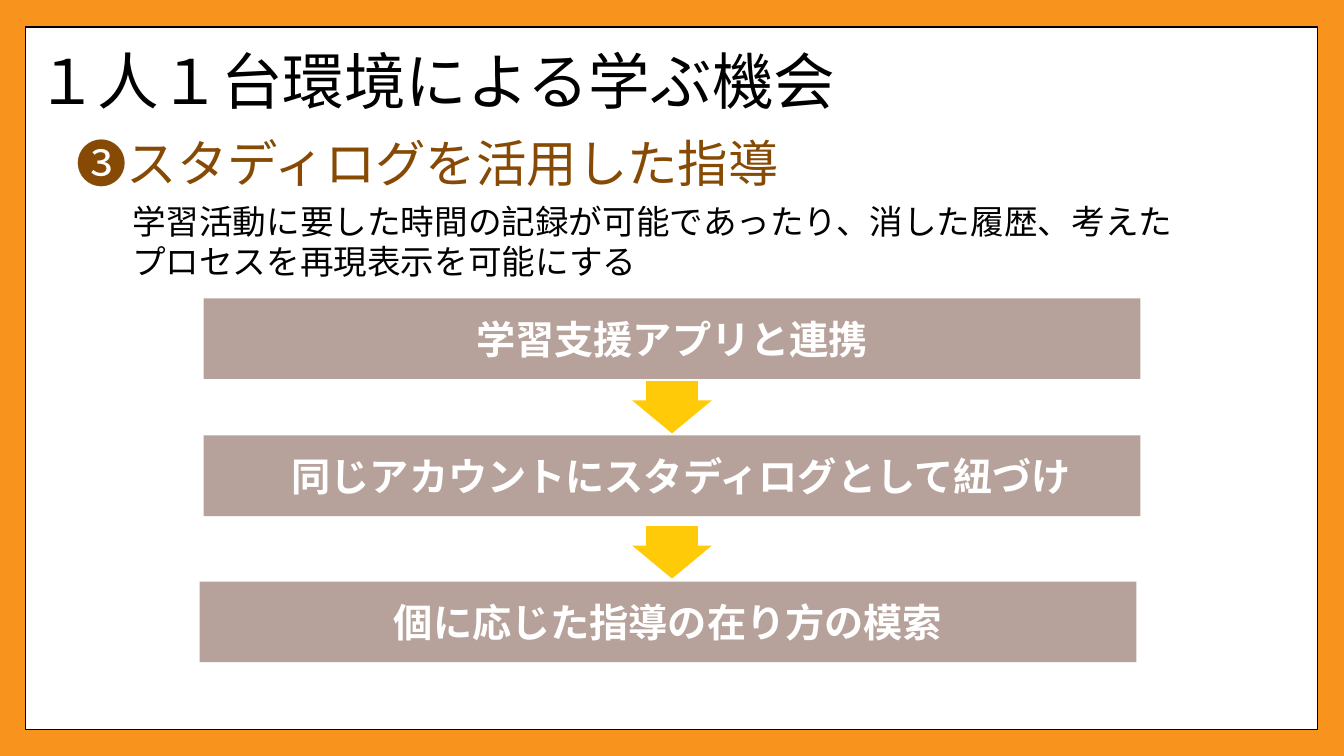
from lxml.etree import SubElement
from pptx import Presentation
from pptx.dml.color import RGBColor
from pptx.enum.shapes import MSO_SHAPE
from pptx.enum.text import MSO_ANCHOR, PP_ALIGN
from pptx.oxml.ns import qn
from pptx.util import Inches, Pt

FONT = "Noto Sans CJK JP"
TITLE = "１人１台環境による学ぶ機会"
TEXTS = [
    ("❸スタディログを活用した指導", (0.76, 1.31, 10.47, 0.55), 36, "864A04"),
    ("学習活動に要した時間の記録が可能であったり、消した履歴、考えたプロセスを再現表示を可能にする",
     (1.31, 1.99, 10.47, 0.8), 24, "000000"),
]
STEPS = [
    ("学習支援アプリと連携", 2.02, 2.96, 0.1),
    ("同じアカウントにスタディログとして紐づけ", 2.02, 4.32, 0.28),
    ("個に応じた指導の在り方の模索", 1.98, 5.77, 0.1),
]
STEP_SIZE = (9.29, 0.8)
ARROW_TOPS = [3.78, 5.22]
ARROW_SIZE = (0.79, 0.52)


def color(value):
    return RGBColor.from_string(value)


def write(text_frame, text, size, text_color, bold=False):
    text_frame.text = text
    text_frame.word_wrap = True
    for run in text_frame.paragraphs[0].runs:
        run.font.name = FONT
        run.font.size = Pt(size)
        run.font.bold = bold
        run.font.color.rgb = color(text_color)
        SubElement(run.font._element, qn("a:ea"), typeface=FONT)


def add_filled(slide, kind, box, fill):
    shape = slide.shapes.add_shape(kind, *map(Inches, box))
    shape.shadow.inherit = False
    shape.fill.solid()
    shape.fill.fore_color.rgb = color(fill)
    shape.line.fill.background()
    return shape


def main():
    presentation = Presentation()
    presentation.slide_width = Inches(13.33)
    presentation.slide_height = Inches(7.5)
    slide = presentation.slides.add_slide(presentation.slide_layouts[5])
    slide.background.fill.solid()
    slide.background.fill.fore_color.rgb = color("F8931D")

    panel = add_filled(slide, MSO_SHAPE.RECTANGLE, (0.25, 0.27, 12.82, 6.97), "FFFFFF")
    panel.line.color.rgb = color("000000")
    panel.line.width = Pt(1)

    title = slide.shapes.title
    title.element.addprevious(panel.element)
    title.left, title.top, title.width, title.height = map(Inches, (0.26, 0.27, 12.8, 1.14))
    write(title.text_frame, TITLE, 44, "000000")
    title.text_frame.vertical_anchor = MSO_ANCHOR.MIDDLE
    title.text_frame.paragraphs[0].alignment = PP_ALIGN.LEFT
    title.text_frame.paragraphs[0].line_spacing = 0.9

    for text, box, size, text_color in TEXTS:
        text_frame = slide.shapes.add_textbox(*map(Inches, box)).text_frame
        write(text_frame, text, size, text_color)
        text_frame.margin_left = text_frame.margin_right = 0
        text_frame.margin_top = text_frame.margin_bottom = 0

    for text, left, top, left_margin in STEPS:
        step = add_filled(slide, MSO_SHAPE.RECTANGLE, (left, top, *STEP_SIZE), "B6A29A")
        write(step.text_frame, text, 28, "FFFFFF", bold=True)
        step.text_frame.margin_left = Inches(left_margin)
        step.text_frame.vertical_anchor = MSO_ANCHOR.MIDDLE
        step.text_frame.paragraphs[0].alignment = PP_ALIGN.CENTER

    for top in ARROW_TOPS:
        arrow = add_filled(slide, MSO_SHAPE.DOWN_ARROW, (6.27, top, *ARROW_SIZE), "FFCA08")
        arrow.adjustments[0] = 0.65
        arrow.adjustments[1] = 0.63

    presentation.save("out.pptx")


if __name__ == "__main__":
    main()
